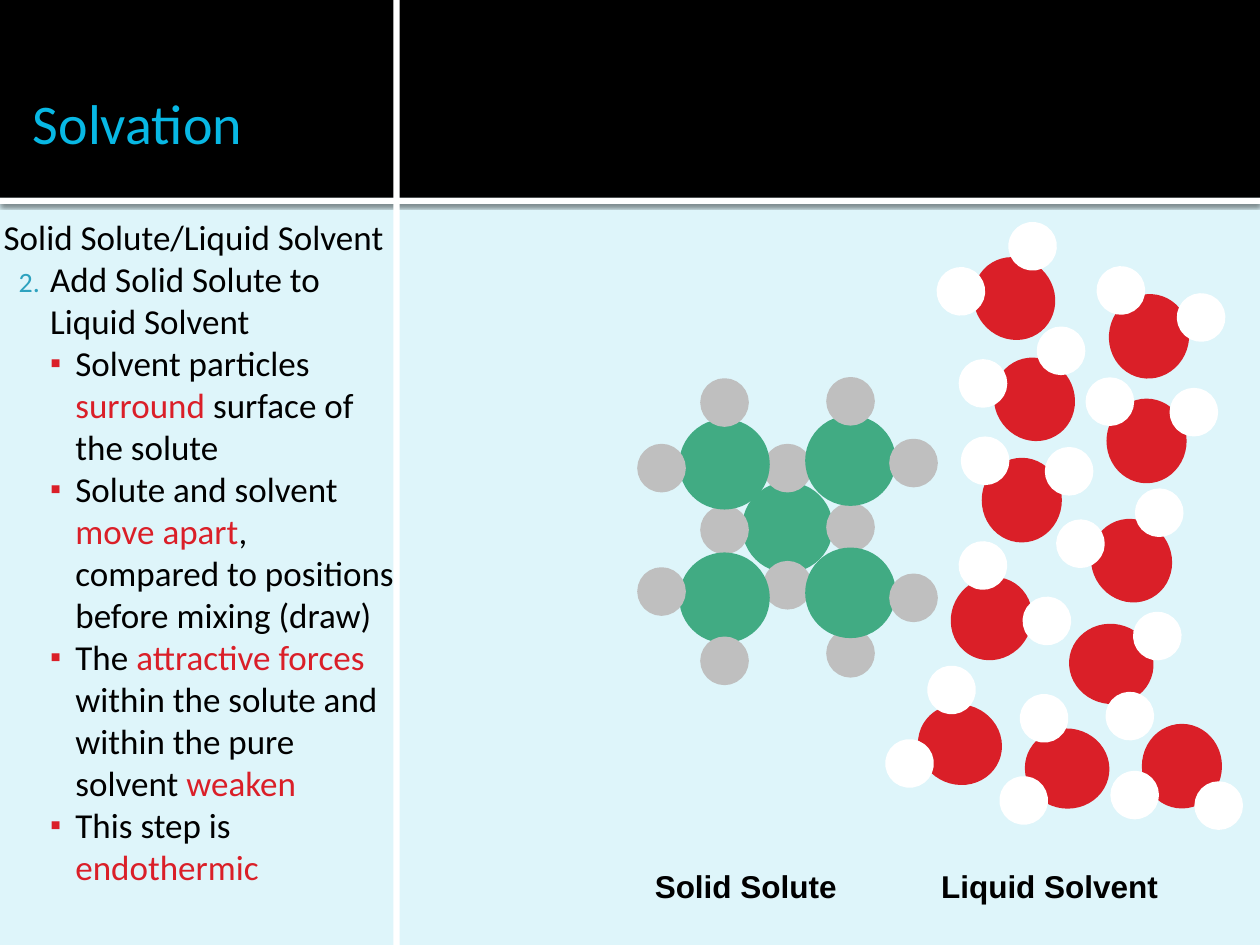
import math
from lxml import etree
from pptx import Presentation
from pptx.dml.color import RGBColor
from pptx.enum.shapes import MSO_SHAPE
from pptx.enum.text import MSO_ANCHOR, PP_ALIGN
from pptx.oxml.ns import qn
from pptx.util import Pt

RECTANGLE, OVAL = MSO_SHAPE.RECTANGLE, MSO_SHAPE.OVAL
TOP, BOTTOM = MSO_ANCHOR.TOP, MSO_ANCHOR.BOTTOM
LEFT, CENTER = PP_ALIGN.LEFT, PP_ALIGN.CENTER

COLORS = {
    "background": "DEF5FA", "black": "000000", "white": "FFFFFF",
    "title": "08B8E4", "number": "2DA2BF", "red": "DA1F28",
    "green": "41AB83", "gray": "BFBFBF",
}

TITLE = "Solvation"
NOTES = [
    ("heading", [("Solid Solute/Liquid Solvent", "black")]),
    ("step", [("Add Solid Solute to Liquid Solvent", "black")]),
    ("point", [("Solvent particles ", "black"), ("surround", "red"),
               (" surface of the solute", "black")]),
    ("point", [("Solute and solvent ", "black"), ("move apart", "red"),
               (", compared to positions before mixing (draw)", "black")]),
    ("point", [("The ", "black"), ("attractive forces ", "red"),
               ("within the solute and within the pure solvent ", "black"),
               ("weaken", "red")]),
    ("point", [("This step is ", "black"), ("endothermic", "red")]),
]
LIST_STYLES = {
    "step": {"margin": 26.6, "hang": 18, "color": "number", "percent": 80, "level": 0,
             "mark": ("a:buAutoNum", {"type": "arabicPeriod", "startAt": "2"})},
    "point": {"margin": 41, "hang": 14.4, "color": "red", "percent": 90, "level": 1,
              "mark": ("a:buChar", {"char": "▪"})},
}
CAPTIONS = [("Solid Solute", 354.2), ("Liquid Solvent", 527.8)]

BARS = [
    ("white", 0, 113, 720, 3.6, True),
    ("black", 0, 0, 720, 113, False),
    ("white", 224.8, 0, 3.6, 540, False),
]

COLUMN_START, COLUMN_STEP = 378, 36
LATTICE_LAYERS = [
    ("green", 48, [(2, 301.3)]),
    ("gray", 24, [(3, 301.3), (3, 373.3), (2, 267.5), (1, 302.8), (2, 334.4)]),
    ("green", 48, [(1, 341.6), (3, 338.8), (3, 263.2), (1, 265.3)]),
    ("gray", 24, [(1, 377.6), (4, 264.6), (4, 341.6), (0, 267.5),
                  (3, 229.3), (0, 338), (1, 230)]),
]

MOLECULES = [
    (566.6, 353.5, 33.8), (591.1, 228.2, 330.2), (675.4, 437.8, 180),
    (655.2, 252, 0), (656.6, 192.2, 11.5), (583.9, 285.8, 0),
    (646.6, 320.4, 331.4), (635, 379.4, 101.8), (548.6, 425.5, 292.6),
    (579.6, 170.6, 320.7), (609.8, 439.2, 276.8),
]
OXYGEN_SIZE = (42, 44.6)
HYDROGEN_SIZE = (24, 24)
HYDROGEN_OFFSETS = [(-21, -22.5), (27, -16.5)]


def color(name):
    return RGBColor.from_string(COLORS[name])


def add_color(parent, name):
    return etree.SubElement(parent, qn("a:srgbClr"), val=COLORS[name])


def add_figure(shapes, kind, fill, left, top, width, height):
    shape = shapes.add_shape(kind, Pt(left), Pt(top), Pt(width), Pt(height))
    shape.shadow.inherit = False
    shape.fill.solid()
    shape.fill.fore_color.rgb = color(fill)
    shape.line.fill.background()
    return shape


def add_atom(shapes, fill, x, y, size, rotation=0):
    width, height = size
    atom = add_figure(shapes, OVAL, fill, x - width / 2, y - height / 2, width, height)
    atom.rotation = rotation
    atom.line.color.rgb = color(fill)
    atom.line.width = Pt(3.78)


def add_molecule(page, x, y, rotation):
    shapes = page.shapes.add_group_shape().shapes
    add_atom(shapes, "red", x, y, OXYGEN_SIZE, rotation)
    cosine, sine = math.cos(math.radians(rotation)), math.sin(math.radians(rotation))
    for across, down in HYDROGEN_OFFSETS:
        add_atom(shapes, "white", x + across * cosine - down * sine,
                 y + across * sine + down * cosine, HYDROGEN_SIZE, rotation)


def add_shadow(shape):
    effects = shape.element.spPr.find(qn("a:effectLst"))
    shadow = etree.SubElement(effects, qn("a:outerShdw"), blurRad=str(Pt(2.5)),
                              dist=str(Pt(0.8)), dir="5400000", rotWithShape="0")
    etree.SubElement(add_color(shadow, "black"), qn("a:alpha"), val="60000")


def set_list_style(para, style):
    para.level = style["level"]
    props = para._p.get_or_add_pPr()
    props.set("marL", str(Pt(style["margin"])))
    props.set("indent", str(-Pt(style["hang"])))
    add_color(etree.SubElement(props, qn("a:buClr")), style["color"])
    etree.SubElement(props, qn("a:buSzPct"), val=str(style["percent"] * 1000))
    etree.SubElement(props, qn("a:buFont"), typeface="Arial")
    tag, attributes = style["mark"]
    etree.SubElement(props, qn(tag), attributes)


def write_text(box, paragraphs, size, font="Calibri", bold=False, align=LEFT,
               anchor=TOP, insets=(7.2, 3.6, 7.2, 3.6)):
    frame = box.text_frame
    frame.word_wrap = True
    frame.vertical_anchor = anchor
    (frame.margin_left, frame.margin_top,
     frame.margin_right, frame.margin_bottom) = map(Pt, insets)
    for index, (kind, spans) in enumerate(paragraphs):
        para = frame.add_paragraph() if index else frame.paragraphs[0]
        para.alignment = align
        if kind in LIST_STYLES:
            set_list_style(para, LIST_STYLES[kind])
        for text, shade in spans:
            span = para.add_run()
            span.text = text
            span.font.name = font
            span.font.size = Pt(size)
            span.font.bold = bold
            span.font.color.rgb = color(shade)


def main():
    deck = Presentation()
    deck.slide_width, deck.slide_height = Pt(720), Pt(540)
    page = deck.slides.add_slide(deck.slide_layouts[5])
    page.background.fill.solid()
    page.background.fill.fore_color.rgb = color("background")

    for fill, left, top, width, height, shaded in BARS:
        bar = add_figure(page.shapes, RECTANGLE, fill, left, top, width, height)
        if shaded:
            add_shadow(bar)

    title = page.shapes.title
    title.element.getparent().append(title.element)
    title.left, title.top, title.width, title.height = map(Pt, (13, 12.2, 198.7, 77))
    write_text(title, [("heading", [(TITLE, "title")])], 32,
               anchor=BOTTOM, insets=(5.8, 3.6, 3.6, 0))

    notes = page.shapes.add_textbox(Pt(-2.2), Pt(116), Pt(236.2), Pt(424))
    write_text(notes, NOTES, 20, insets=(4.3, 7.2, 7.2, 3.6))

    for fill, size, places in LATTICE_LAYERS:
        for column, y in places:
            add_atom(page.shapes, fill, COLUMN_START + column * COLUMN_STEP, y, (size, size))
    for x, y, rotation in MOLECULES:
        add_molecule(page, x, y, rotation)

    for text, left in CAPTIONS:
        caption = page.shapes.add_textbox(Pt(left), Pt(491.8), Pt(144), Pt(28.8))
        write_text(caption, [("heading", [(text, "black")])], 18,
                   font="Arial", bold=True, align=CENTER)

    deck.save("out.pptx")


if __name__ == "__main__":
    main()
